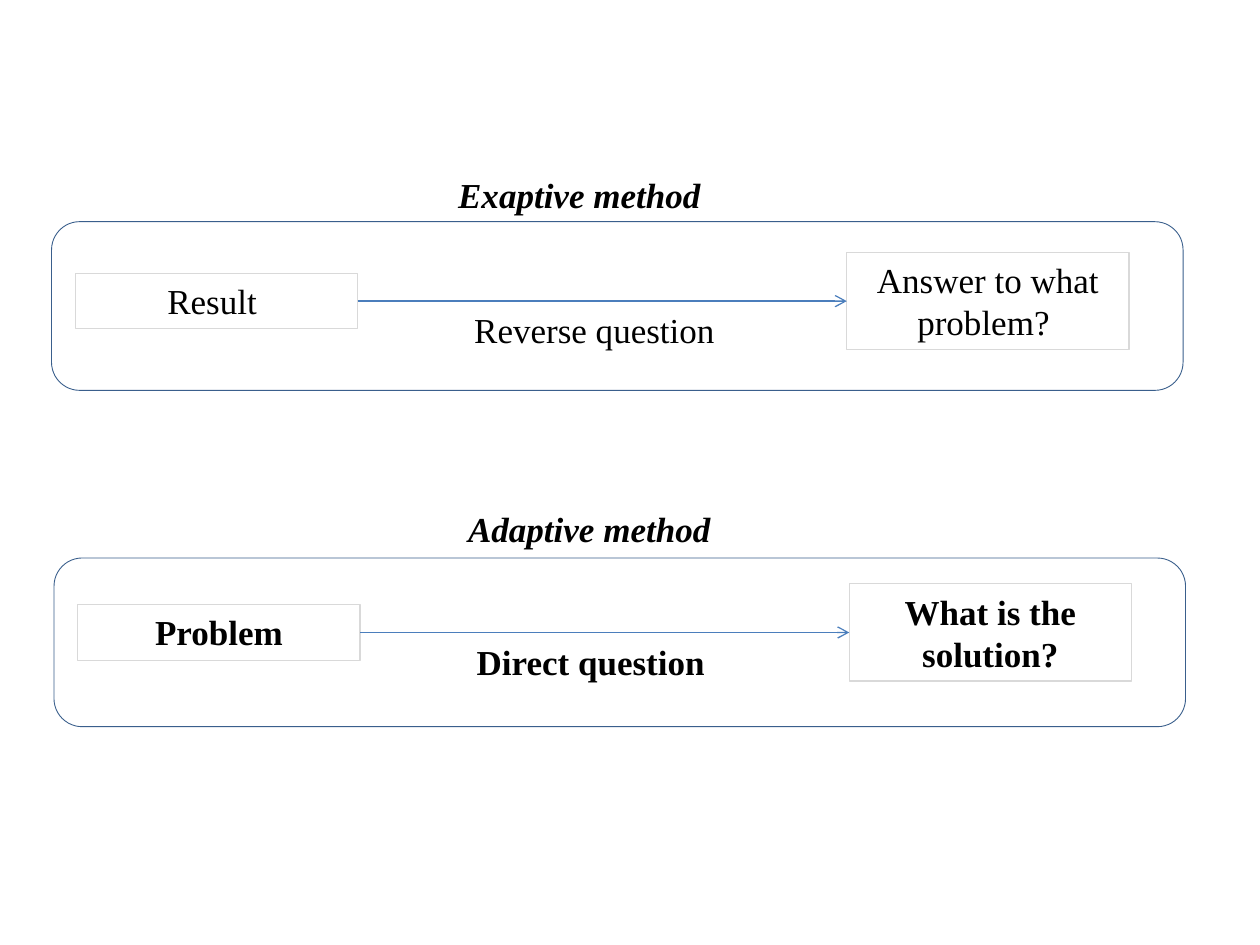
from dataclasses import dataclass

from lxml import etree
from pptx import Presentation
from pptx import util as u
from pptx.dml.color import RGBColor
from pptx.enum import shapes, text
from pptx.oxml import ns


@dataclass(frozen=True)
class Theme:
    font: str = "Times New Roman"
    size: int = 20
    ink: str = "000000"
    box_line: str = "D9D9D9"
    frame_line: str = "3A5F8C"
    arrow_line: str = "4B7EBC"
    thin: float = 0.5
    normal: float = 0.75


THEME = Theme()
ROW_HEIGHT = 1.12

METHODS = [
    dict(box=(1.04, 4.47, 22.81, 3.4), title="Exaptive method",
         title_at=(7.01, -1.09), row=1.6, start="Result ",
         question="Reverse question", answer="Answer to what problem? ",
         bold=False),
    dict(box=(1.09, 11.25, 22.81, 3.4), title="Adaptive method",
         title_at=(7.16, -1.14), row=1.5, start="Problem",
         question="Direct question", answer="What is the solution?",
         bold=True),
]


def write(shape, wording, align, **style):
    frame = shape.text_frame
    frame.word_wrap = True
    frame.vertical_anchor = text.MSO_ANCHOR.TOP
    paragraph = frame.paragraphs[0]
    paragraph.alignment = align
    run = paragraph.add_run()
    run.text = wording
    formats = dict(name=THEME.font, size=u.Pt(THEME.size), **style)
    for attribute, value in formats.items():
        setattr(run.font, attribute, value)
    run.font.color.rgb = RGBColor.from_string(THEME.ink)


def set_line(line, color, width):
    line.color.rgb = RGBColor.from_string(color)
    line.width = u.Pt(width)


def add_outline(slide, preset, box, color, width):
    """Add an unfilled shape; box is left, top, width, height in cm."""
    outline = slide.shapes.add_shape(preset, *map(u.Cm, box))
    outline.shadow.inherit = False
    outline.fill.background()
    set_line(outline.line, color, width)
    return outline


def add_label(slide, box, wording, align, **style):
    label = slide.shapes.add_textbox(*map(u.Cm, box))
    write(label, wording, align, **style)


def add_arrow(slide, left, right, y):
    arrow = slide.shapes.add_connector(
        shapes.MSO_CONNECTOR.STRAIGHT, *map(u.Cm, (left, y, right, y)))
    set_line(arrow.line, THEME.arrow_line, THEME.normal)
    etree.SubElement(arrow.line._get_or_add_ln(), ns.qn("a:tailEnd"), type="arrow")
    etree.SubElement(arrow._element.spPr, ns.qn("a:effectLst"))


def add_method(slide, box, title, title_at, row, start, question, answer, bold):
    """Draw a titled frame with an arrow from start to answer, row cm below its top."""
    left, top, _, _ = box
    center = top + row
    step_width = 5.69
    start_left, answer_left = left + 0.48, left + 16.03
    steps = [(start_left, ROW_HEIGHT, start), (answer_left, 1.96, answer)]

    for step_left, height, wording in steps:
        step = add_outline(slide, shapes.MSO_SHAPE.RECTANGLE,
                           (step_left, center - height / 2, step_width, height),
                           THEME.box_line, THEME.normal)
        write(step, wording, text.PP_ALIGN.CENTER, bold=bold)

    add_arrow(slide, start_left + step_width, answer_left, center)
    add_label(slide, (left + 8.27, center + 0.03, 6.12, ROW_HEIGHT),
              question, text.PP_ALIGN.LEFT, bold=bold)
    add_outline(slide, shapes.MSO_SHAPE.ROUNDED_RECTANGLE, box,
                THEME.frame_line, THEME.thin)
    title_left, title_top = title_at
    add_label(slide, (left + title_left, top + title_top, 7.26, ROW_HEIGHT),
              title, text.PP_ALIGN.CENTER, bold=True, italic=True)


def main():
    deck = Presentation()
    deck.slide_width, deck.slide_height = u.Cm(25.4), u.Cm(19.05)
    slide = deck.slides.add_slide(deck.slide_layouts.get_by_name("Blank"))
    for method in METHODS:
        add_method(slide, **method)
    deck.save("out.pptx")


if __name__ == "__main__":
    main()
